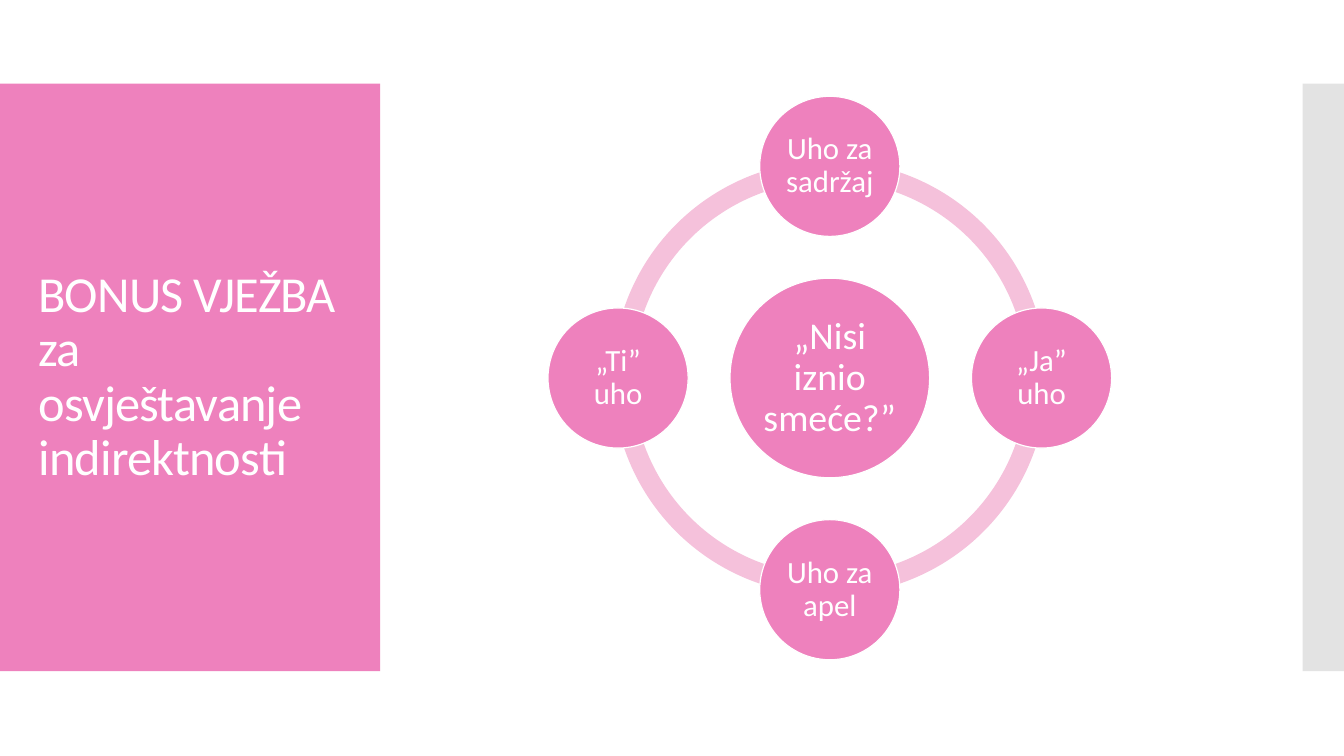
"""Build the slide with four ears arranged around one message."""
from math import cos, radians, sin

from lxml.etree import SubElement
from pptx import Presentation
from pptx.dml.color import RGBColor
from pptx.enum.shapes import MSO_SHAPE
from pptx.enum.text import MSO_ANCHOR, MSO_AUTO_SIZE, PP_ALIGN
from pptx.oxml.ns import qn
from pptx.util import Inches, Pt

TITLE = "BONUS VJEŽBA za osvještavanje indirektnosti"
MESSAGE = "„Nisi iznio smeće?”"
EARS = ["Uho za sadržaj", "„Ja” uho", "Uho za apel", "„Ti” uho"]
FONT = "Calibri"
PINK, PALE_PINK, GREY, WHITE = "EE81BD", "F5C1DB", "C8C8C8", "FFFFFF"
CENTER_X, CENTER_Y, ORBIT = 8.23, 3.75, 2.1
RING_SIZE, RING_WIDTH = 4.31, 0.046
MESSAGE_SIZE, EAR_SIZE = 1.98, 1.39
QUARTER_TURN, FULL_TURN = 54, 216


def color(value):
    return RGBColor.from_string(value)


def add_filled(slide, kind, left, top, width, height, fill):
    shape = slide.shapes.add_shape(
        kind, Inches(left), Inches(top), Inches(width), Inches(height))
    shape.shadow.inherit = False
    shape.fill.solid()
    shape.fill.fore_color.rgb = color(fill)
    shape.line.fill.background()
    return shape


def write(shape, text, size, align):
    frame = shape.text_frame
    frame.word_wrap = True
    frame.auto_size = MSO_AUTO_SIZE.NONE
    frame.vertical_anchor = MSO_ANCHOR.MIDDLE
    paragraph = frame.paragraphs[0]
    paragraph.alignment = align
    paragraph.line_spacing = 0.9
    run = paragraph.add_run()
    run.text = text
    run.font.name = FONT
    run.font.size = Pt(size)
    run.font.color.rgb = color(WHITE)
    return run


def add_circle(slide, center_x, center_y, diameter, text, size, inset):
    circle = add_filled(slide, MSO_SHAPE.OVAL, center_x - diameter / 2,
                        center_y - diameter / 2, diameter, diameter, PINK)
    circle.line.color.rgb = color(WHITE)
    circle.line.width = Pt(0.85)
    frame = circle.text_frame
    frame.margin_left = frame.margin_right = Inches(inset)
    frame.margin_top = frame.margin_bottom = Inches(inset)
    write(circle, text, size, PP_ALIGN.CENTER)


def add_panels_and_title(slide):
    add_filled(slide, MSO_SHAPE.RECTANGLE, 0, 0.83, 3.77, 5.83, PINK)
    edge = add_filled(slide, MSO_SHAPE.RECTANGLE, 12.92, 0.83, 0.41, 5.83, GREY)
    edge_color = edge.fill._xPr.find(qn("a:solidFill"))[0]
    SubElement(edge_color, qn("a:alpha")).set("val", "50000")

    title = slide.shapes.title
    title.left, title.top = Inches(0.28), Inches(1.23)
    title.width, title.height = Inches(3.22), Inches(5.03)
    run = write(title, TITLE, 36, PP_ALIGN.LEFT)
    run.font._element.set("spc", "-60")
    slide.shapes._spTree.append(title._element)


def add_ear_diagram(slide):
    for quarter in range(4):
        start = quarter * QUARTER_TURN
        arc = add_filled(slide, MSO_SHAPE.BLOCK_ARC, CENTER_X - RING_SIZE / 2,
                         CENTER_Y - RING_SIZE / 2, RING_SIZE, RING_SIZE, PALE_PINK)
        arc.adjustments[0] = start
        arc.adjustments[1] = (start + QUARTER_TURN) % FULL_TURN
        arc.adjustments[2] = RING_WIDTH

    add_circle(slide, CENTER_X, CENTER_Y, MESSAGE_SIZE, MESSAGE, 27, 0.04)
    for index, ear in enumerate(EARS):
        angle = radians(index * 360 / len(EARS) - 90)
        add_circle(slide, CENTER_X + ORBIT * cos(angle),
                   CENTER_Y + ORBIT * sin(angle), EAR_SIZE, ear, 22, 0.03)


def main():
    presentation = Presentation()
    presentation.slide_width = Inches(13.33)
    presentation.slide_height = Inches(7.5)
    slide = presentation.slides.add_slide(presentation.slide_layouts[5])
    add_panels_and_title(slide)
    add_ear_diagram(slide)
    presentation.save("out.pptx")


if __name__ == "__main__":
    main()
